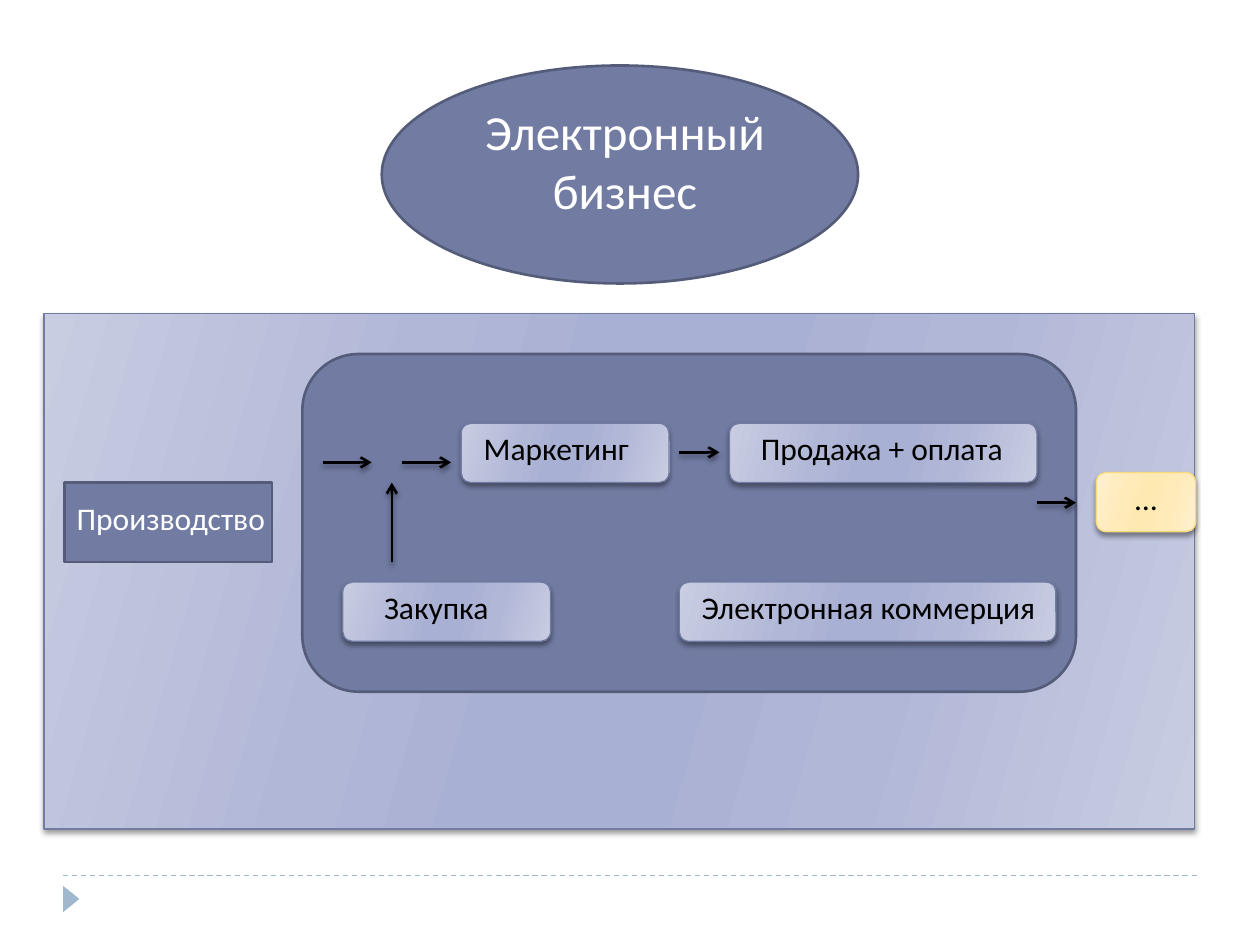
from lxml.etree import SubElement
from pptx import Presentation
from pptx.dml.color import RGBColor
from pptx.enum.dml import MSO_LINE_DASH_STYLE as Dash
from pptx.enum.shapes import MSO_CONNECTOR as Connector, MSO_SHAPE as Shape
from pptx.enum.text import PP_ALIGN as Align
from pptx.oxml.ns import qn
from pptx.util import Inches, Pt

COLORS = {
    "slate": "727CA3", "slate_edge": "545C79", "footer": "9FB8CD",
    "gold_edge": "FADA7A", "white": "FFFFFF", "black": "000000",
}
GRADIENTS = {
    "lavender": ("C9CDE2", "B1B7D7", "A8B0D3"),
    "gold": ("FFF0CF", "FFEBBA", "FFE9B3"),
}
STOPS = [(0, 0), (30, 1), (45, 2), (55, 2), (73, 1), (100, 0)]
GRADIENT_ANGLE = 16

BOX_HEIGHT = 0.47
LABEL_HEIGHT = 0.4
TOP_ROW, BOTTOM_ROW, EXIT_ROW = 3.36, 4.62, 3.75

SOLID_SHAPES = {
    "title": (Shape.OVAL, 3.03, 0.52, 3.78, 1.73),
    "production": (Shape.RECTANGLE, 0.51, 3.83, 1.65, 0.63),
    "commerce": (Shape.ROUNDED_RECTANGLE, 2.4, 2.81, 6.14, 2.68),
}
BACKDROP = (Shape.RECTANGLE, 0.35, 2.49, 9.13, 4.09)
STEPS = [
    (3.66, TOP_ROW, 1.65, "lavender", "slate"),
    (5.79, TOP_ROW, 2.44, "lavender", "slate"),
    (2.72, BOTTOM_ROW, 1.65, "lavender", "slate"),
    (5.39, BOTTOM_ROW, 2.99, "lavender", "slate"),
    (8.7, EXIT_ROW, 0.79, "gold", "gold_edge"),
]
LABELS = [
    ("Производство", 0.51, 3.91, 1.81, "white", Align.LEFT),
    ("Маркетинг", 3.74, TOP_ROW, 1.57, "black", Align.LEFT),
    ("Продажа + оплата", 5.94, TOP_ROW, 2.36, "black", Align.LEFT),
    ("Закупка", 2.95, BOTTOM_ROW, 1.34, "black", Align.LEFT),
    ("Электронная коммерция", 5.47, BOTTOM_ROW, 3.54, "black", Align.LEFT),
    ("…", 8.86, EXIT_ROW, 0.47, "black", Align.CENTER),
]
ARROWS = [
    (2.56, 3.67, 2.95, 3.67),
    (3.11, 4.46, 3.11, 3.83),
    (3.19, 3.67, 3.58, 3.67),
    (5.39, 3.59, 5.71, 3.59),
    (8.23, 3.99, 8.54, 3.99),
]

deck = Presentation()
deck.slide_width, deck.slide_height = Inches(10), Inches(7.5)
page = deck.slides.add_slide(deck.slide_layouts[6])


def rgb(name):
    return RGBColor.from_string(COLORS[name])


def set_line(item, color, width):
    item.line.color.rgb = rgb(color)
    item.line.width = Pt(width)


def add_shadow(item):
    properties = item._element.spPr
    effects = properties.find(qn("a:effectLst"))
    if effects is None:
        effects = SubElement(properties, qn("a:effectLst"))
    shadow = SubElement(effects, qn("a:outerShdw"), blurRad=str(Pt(3)),
                        dist=str(Pt(2)), dir=str(90 * 60000), rotWithShape="0")
    color = SubElement(shadow, qn("a:srgbClr"), val=COLORS["black"])
    SubElement(color, qn("a:alpha"), val="40000")


def add_shape(kind, left, top, width, height):
    shape = page.shapes.add_shape(kind, *map(Inches, (left, top, width, height)))
    shape.shadow.inherit = False
    return shape


def add_solid(name):
    shape = add_shape(*SOLID_SHAPES[name])
    shape.fill.solid()
    shape.fill.fore_color.rgb = rgb("slate")
    set_line(shape, "slate_edge", 1.5)


def add_gradient(geometry, gradient, edge):
    shape = add_shape(*geometry)
    shape.fill.gradient()
    shape.fill.gradient_angle = 360 - GRADIENT_ANGLE
    stops = shape._element.spPr.find(".//" + qn("a:gsLst"))
    for stop in list(stops):
        stops.remove(stop)
    for position, tone in STOPS:
        stop = SubElement(stops, qn("a:gs"), pos=str(position * 1000))
        SubElement(stop, qn("a:srgbClr"), val=GRADIENTS[gradient][tone])
    set_line(shape, edge, 0.75)
    add_shadow(shape)


def add_label(text, left, top, width, color, align,
              height=LABEL_HEIGHT, size=18):
    box = page.shapes.add_textbox(*map(Inches, (left, top, width, height)))
    box.text_frame.word_wrap = True
    box.text_frame.text = text
    para = box.text_frame.paragraphs[0]
    para.alignment = align
    font = para.runs[0].font
    font.name, font.size = "Calibri", Pt(size)
    font.color.rgb = rgb(color)


def add_line(points, color, width):
    line = page.shapes.add_connector(Connector.STRAIGHT, *map(Inches, points))
    set_line(line, color, width)
    SubElement(line._element.spPr, qn("a:effectLst"))
    return line


footer_line = add_line((0.5, 6.95, 9.5, 6.95), "footer", 0.75)
footer_line.line.dash_style = Dash.DASH
marker = add_shape(Shape.ISOSCELES_TRIANGLE, 0.46, 7.07, 0.21, 0.13)
marker.rotation = 90
marker.fill.solid()
marker.fill.fore_color.rgb = rgb("footer")
marker.line.fill.background()

add_solid("title")
add_label("Электронный бизнес", 3.66, 0.76, 2.6, "white", Align.CENTER,
          height=1.04, size=28)
add_gradient(BACKDROP, "lavender", "slate")
add_solid("production")
add_solid("commerce")

for left, top, width, gradient, edge in STEPS:
    add_gradient((Shape.ROUNDED_RECTANGLE, left, top, width, BOX_HEIGHT),
                 gradient, edge)
for label in LABELS:
    add_label(*label)
for points in ARROWS:
    arrow = add_line(points, "black", 1.5)
    SubElement(arrow.line._get_or_add_ln(), qn("a:tailEnd"), type="arrow")
    add_shadow(arrow)

deck.save("out.pptx")
